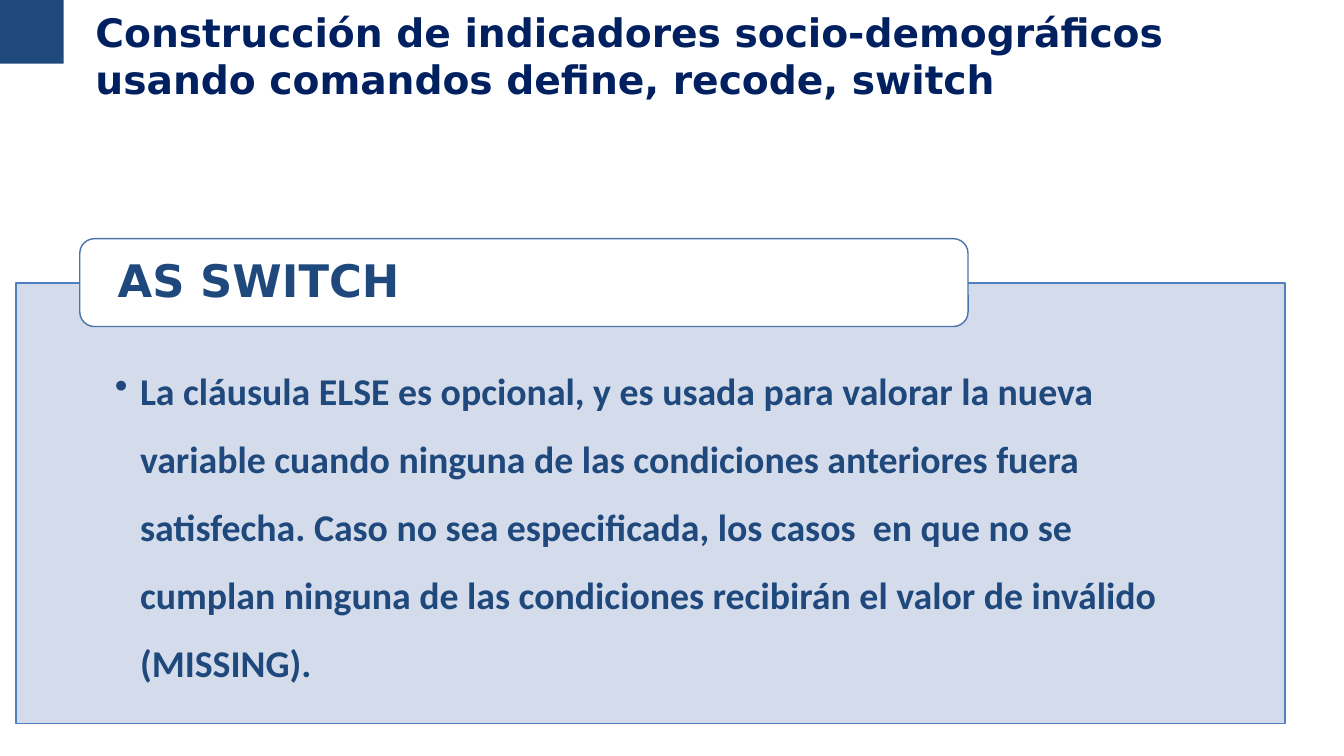
"""Build the slide on the ELSE clause of AS SWITCH."""
from dataclasses import dataclass
from typing import Optional

from lxml.etree import SubElement
from pptx import Presentation
from pptx.dml.color import RGBColor
from pptx.enum.shapes import MSO_SHAPE as Kind
from pptx.enum.text import MSO_ANCHOR as Anchor, MSO_AUTO_SIZE as Fit, PP_ALIGN as Align
from pptx.oxml.ns import qn
from pptx.util import Pt

COLORS = {"navy": "002060", "blue": "1F497D", "pale": "D0D8E8",
          "edge": "4F81BD", "rim": "4875AC", "white": "FFFFFF"}


@dataclass
class Block:
    """A filled shape, with lengths in points."""
    left: float
    top: float
    width: float
    height: float
    fill: str
    line: Optional[str] = None
    kind: Kind = Kind.RECTANGLE
    alpha: int = 100


MARK = Block(0, 0, 46, 45.5, "blue")
STRIP = Block(45.5, 0, 7, 80.5, "white")
PANEL = Block(11.5, 202.25, 906.5, 314.75, "pale", "edge", alpha=90)
LABEL = Block(57, 170.5, 634.5, 62.75, "white", "rim", Kind.ROUNDED_RECTANGLE)


def color(name: str) -> RGBColor:
    """Look up a named colour."""
    return RGBColor.from_string(COLORS[name])


def draw(slide, block: Block):
    """Add one block to the slide."""
    shape = slide.shapes.add_shape(block.kind, Pt(block.left), Pt(block.top),
                                   Pt(block.width), Pt(block.height))
    shape.shadow.inherit = False
    shape.fill.solid()
    shape.fill.fore_color.rgb = color(block.fill)
    if block.alpha < 100:
        tone = shape.fill._xPr.find(qn("a:solidFill"))[0]
        SubElement(tone, qn("a:alpha")).set("val", str(block.alpha * 1000))
    if block.line:
        shape.line.color.rgb = color(block.line)
        shape.line.width = Pt(1)
    else:
        shape.line.fill.background()
    return shape


def write(shape, text: str, *, size: float, font: str = "DejaVu Sans",
          ink: str = "blue", inset: tuple = (7.2, 3.6, 7.2, 3.6),
          anchor: Anchor = Anchor.MIDDLE, indent: float = 0, hang: float = 0,
          space: float = 1, bullet: str = "") -> None:
    """Fill a shape with one bold paragraph."""
    frame = shape.text_frame
    frame.word_wrap = True
    frame.auto_size = Fit.NONE
    frame.vertical_anchor = anchor
    (frame.margin_left, frame.margin_top,
     frame.margin_right, frame.margin_bottom) = map(Pt, inset)
    para = frame.paragraphs[0]
    para.alignment = Align.LEFT
    para.line_spacing = space
    props = para._p.get_or_add_pPr()
    props.set("marL", str(Pt(indent)))
    props.set("indent", str(Pt(hang)))
    if bullet:
        SubElement(props, qn("a:buChar")).set("char", bullet)
    run = para.add_run()
    run.text = text
    run.font.name = font
    run.font.size = Pt(size)
    run.font.bold = True
    run.font.color.rgb = color(ink)


def main() -> None:
    """Build and save the slide."""
    deck = Presentation()
    deck.slide_width, deck.slide_height = Pt(960), Pt(540)
    slide = deck.slides.add_slide(deck.slide_layouts[5])
    draw(slide, MARK)
    draw(slide, STRIP)
    title = slide.shapes.title
    title.left, title.top = Pt(11.5), Pt(0)
    title.width, title.height = Pt(918.5), Pt(78.5)
    write(title, "Construcción de indicadores socio-demográficos "
          "usando comandos define, recode, switch",
          size=28, ink="navy", indent=49.5)
    write(draw(slide, PANEL),
          "La cláusula ELSE es opcional, y es usada para valorar la nueva "
          "variable cuando ninguna de las condiciones anteriores fuera "
          "satisfecha. Caso no sea especificada, los casos  en que no se "
          "cumplan ninguna de las condiciones recibirán el valor de inválido "
          "(MISSING).",
          size=27, font="Calibri", inset=(70.5, 44, 70.5, 15),
          anchor=Anchor.TOP, indent=18, hang=-18, space=1.5, bullet="•")
    write(draw(slide, LABEL), "AS SWITCH", size=32,
          inset=(24, 0, 24, 0), space=0.9)
    deck.save("out.pptx")


if __name__ == "__main__":
    main()
